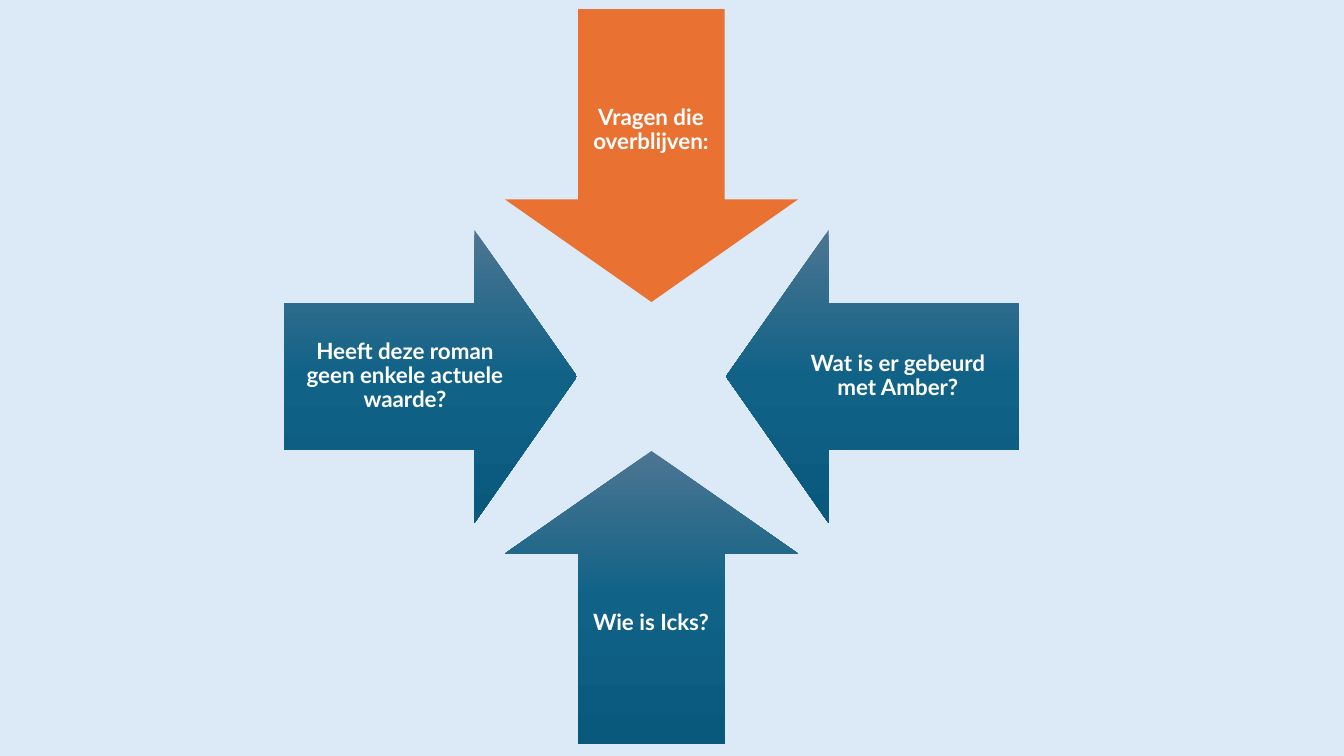
from dataclasses import dataclass

from pptx import Presentation
from pptx.dml.color import RGBColor
from pptx.enum.shapes import MSO_SHAPE
from pptx.enum.text import MSO_ANCHOR, PP_ALIGN
from pptx.oxml import parse_xml
from pptx.oxml.ns import nsdecls, qn
from pptx.shapes.autoshape import Shape
from pptx.shapes.shapetree import GroupShapes
from pptx.util import Emu, Pt

EMU_PER_PX = 914400 / 100.8
PAGE_WIDTH, PAGE_HEIGHT = 1344, 756

# The arrows sit on a three-by-three grid around an empty centre.
CENTRE_LEFT, CENTRE_TOP = 505, 230
GRID_STEP = 221
ARROW_SIZE = 293
LABEL_LENGTH, LABEL_BREADTH = 242, 146
LABEL_INSET = 12


@dataclass(frozen=True)
class Theme:
    background: str = "DCEAF7"
    accent: str = "E97132"
    gradient: tuple[str, ...] = ("4C7591", "106287", "09597D")
    text: str = "FFFFFF"
    font: str = "Lato"
    size: int = 16


@dataclass(frozen=True)
class Question:
    text: str
    column: int
    row: int
    rotation: int
    highlighted: bool = False


THEME = Theme()
QUESTIONS = (
    Question("Vragen die overblijven:", 0, -1, 0, highlighted=True),
    Question("Wat is er gebeurd met Amber?", 1, 0, 90),
    Question("Wie is Icks?", 0, 1, 180),
    Question("Heeft deze roman geen enkele actuele waarde?", -1, 0, 270),
)


def px(value: int) -> Emu:
    return Emu(round(value * EMU_PER_PX))


def fill_gradient(shape: Shape, colours: tuple[str, ...]) -> None:
    """Fill from top to bottom of the page, whatever the shape's rotation."""
    last = len(colours) - 1
    stops = "".join(
        f'<a:gs pos="{index * 100000 // last}"><a:srgbClr val="{colour}"/></a:gs>'
        for index, colour in enumerate(colours)
    )
    gradient = parse_xml(
        f'<a:gradFill {nsdecls("a")} rotWithShape="0"><a:gsLst>{stops}</a:gsLst>'
        '<a:lin ang="5400000" scaled="0"/></a:gradFill>'
    )
    shape.fill.gradient()
    properties = shape.element.spPr
    properties.replace(properties.find(qn("a:gradFill")), gradient)


def add_text(shapes: GroupShapes, text: str, left: int, top: int, width: int,
             height: int, *, size: int, colour: str, bold: bool) -> None:
    box = shapes.add_textbox(px(left), px(top), px(width), px(height))
    frame = box.text_frame
    frame.word_wrap = True
    frame.vertical_anchor = MSO_ANCHOR.MIDDLE
    frame.margin_left = frame.margin_right = px(LABEL_INSET)
    frame.margin_top = frame.margin_bottom = px(LABEL_INSET)
    para = frame.paragraphs[0]
    para.alignment = PP_ALIGN.CENTER
    para.line_spacing = 0.9
    span = para.add_run()
    span.text = text
    span.font.name = THEME.font
    span.font.size = Pt(size)
    span.font.bold = bold
    span.font.color.rgb = RGBColor.from_string(colour)


def add_question(shapes: GroupShapes, question: Question) -> None:
    """Draw an arrow towards the centre, with its label on the tail side."""
    left = CENTRE_LEFT + question.column * GRID_STEP
    top = CENTRE_TOP + question.row * GRID_STEP
    arrow = shapes.add_shape(MSO_SHAPE.DOWN_ARROW, px(left), px(top),
                             px(ARROW_SIZE), px(ARROW_SIZE))
    arrow.adjustments[0] = 0.5
    arrow.adjustments[1] = 0.35
    arrow.rotation = question.rotation
    arrow.shadow.inherit = False
    arrow.line.fill.background()
    if question.highlighted:
        arrow.fill.solid()
        arrow.fill.fore_color.rgb = RGBColor.from_string(THEME.accent)
    else:
        fill_gradient(arrow, THEME.gradient)

    width = LABEL_LENGTH if question.column else LABEL_BREADTH
    height = LABEL_LENGTH if question.row else LABEL_BREADTH
    label_left = left + (1 + question.column) * (ARROW_SIZE - width) // 2
    label_top = top + (1 + question.row) * (ARROW_SIZE - height) // 2
    add_text(shapes, question.text, label_left, label_top, width, height,
             size=THEME.size, colour=THEME.text, bold=True)


def main() -> None:
    deck = Presentation()
    deck.slide_width, deck.slide_height = px(PAGE_WIDTH), px(PAGE_HEIGHT)
    page = deck.slides.add_slide(deck.slide_layouts[6])
    page.background.fill.solid()
    page.background.fill.fore_color.rgb = RGBColor.from_string(THEME.background)
    diagram = page.shapes.add_group_shape()
    for question in QUESTIONS:
        add_question(diagram.shapes, question)
    deck.save("out.pptx")


if __name__ == "__main__":
    main()
